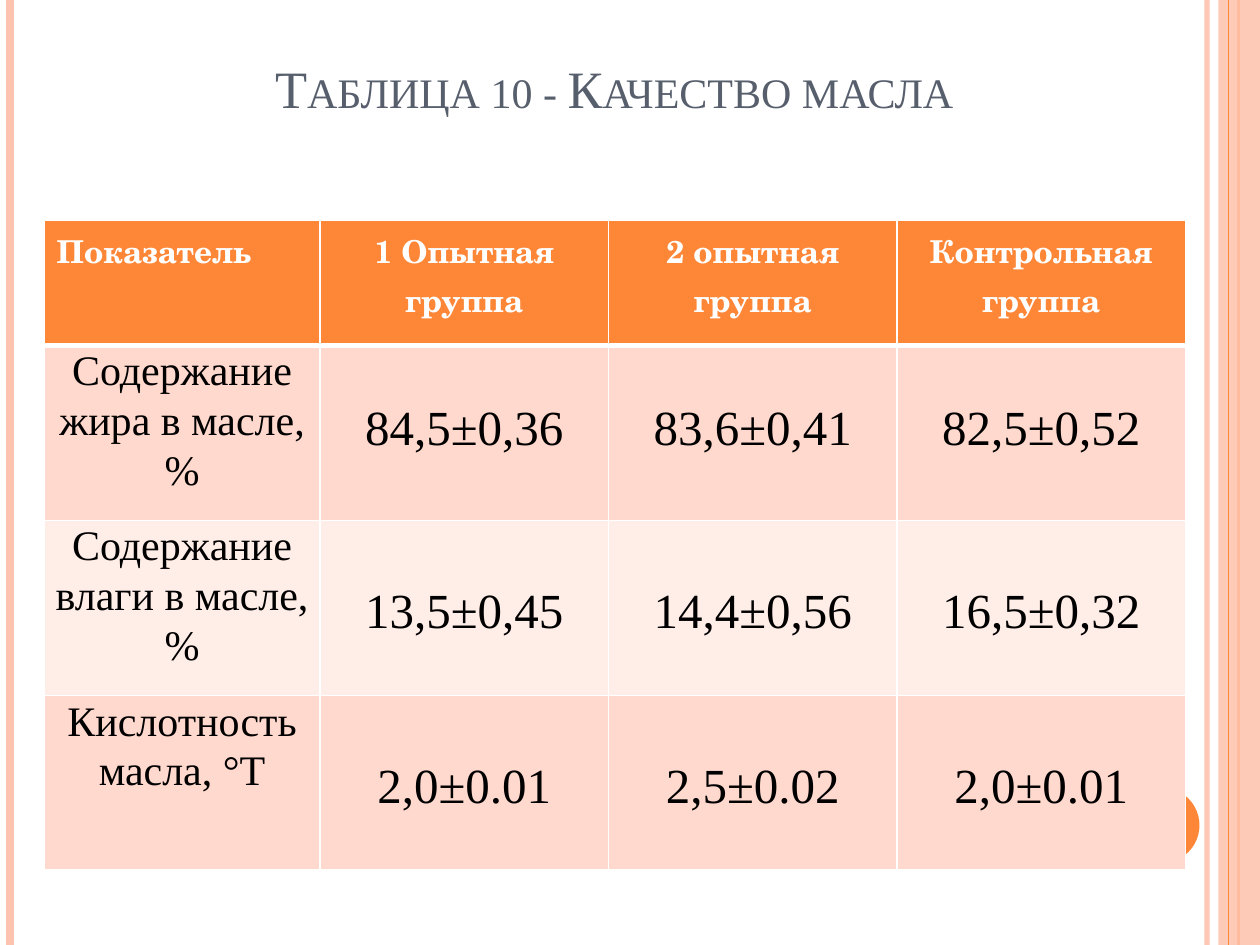
from dataclasses import dataclass

from lxml.etree import SubElement
from pptx import Presentation
from pptx.dml.color import RGBColor as Color
from pptx.enum.shapes import MSO_CONNECTOR as Connector, MSO_SHAPE as Shape
from pptx.enum.text import MSO_ANCHOR as Anchor, PP_ALIGN as Align
from pptx.oxml import parse_xml
from pptx.oxml.ns import nsdecls, qn
from pptx.util import Inches, Pt


@dataclass(frozen=True)
class Theme:
    orange: str = "FE8637"
    peach: str = "FEC3AE"
    slate: str = "575F6D"
    white: str = "FFFFFF"
    black: str = "000000"
    band_dark: str = "FFD9CE"
    band_light: str = "FFEDE8"
    serif: str = "Times New Roman"
    header_font: str = "TeX Gyre Schola"
    title_size: int = 30
    header_size: int = 18
    label_size: int = 24
    value_size: int = 28


THEME = Theme()
TITLE = "Таблица 10 - Качество масла"
HEADERS = ["Показатель", "1 Опытная группа", "2 опытная группа", "Контрольная группа"]
ROWS = [
    ("Содержание жира в масле, %", "84,5±0,36", "83,6±0,41", "82,5±0,52"),
    ("Содержание влаги в масле, %", "13,5±0,45", "14,4±0,56", "16,5±0,32"),
    ("Кислотность масла, °Т", "2,0±0.01", "2,5±0.02", "2,0±0.01"),
]
COLUMN_WIDTHS = [2.19, 2.29, 2.29, 2.29]
ROW_HEIGHTS = [0.99, 1.39, 1.39, 1.38]
VALUE_SPACINGS = [1.0, 1.07, 1.07]
VALUE_SIDES = [0.07, 0.03, 0.03]
LABEL_SPACING, LABEL_SIDE = 1.07, 0.03
VALUE_TOP = 0.45
THIN, THICK = 1, 3


def set_alpha(fill, percent):
    color = fill._xPr.find(qn("a:solidFill"))[0]
    SubElement(color, qn("a:alpha")).set("val", str(percent * 1000))


def add_stripe(slide, x, color, width, alpha=100):
    line = slide.shapes.add_connector(Connector.STRAIGHT, Inches(x), 0, Inches(x), Inches(7.5))
    line.line.color.rgb = Color.from_string(color)
    line.line.width = Pt(width)
    SubElement(line._element.spPr, qn("a:effectLst"))
    if alpha < 100:
        set_alpha(line.line.fill, alpha)


def add_block(slide, kind, box, color, alpha=100):
    shape = slide.shapes.add_shape(kind, *map(Inches, box))
    shape.shadow.inherit = False
    shape.fill.solid()
    shape.fill.fore_color.rgb = Color.from_string(color)
    shape.line.fill.background()
    if alpha < 100:
        set_alpha(shape.fill, alpha)


def write(frame, text, font, size, color, align=Align.CENTER, bold=False, spacing=None):
    paragraph = frame.paragraphs[0]
    paragraph.alignment = align
    paragraph.line_spacing = spacing
    run = paragraph.add_run()
    run.text = text
    run.font.name, run.font.size, run.font.bold = font, Pt(size), bold
    run.font.color.rgb = Color.from_string(color)
    return run


def style_cell(cell, fill, top, bottom):
    cell.fill.solid()
    cell.fill.fore_color.rgb = Color.from_string(fill)
    properties = cell._tc.get_or_add_tcPr()
    borders = [("L", THIN), ("R", THIN), ("T", top), ("B", bottom)]
    for position, (side, width) in enumerate(borders):
        properties.insert(position, parse_xml(
            f'<a:ln{side} {nsdecls("a")} w="{Pt(width)}"><a:solidFill>'
            f'<a:srgbClr val="{THEME.white}"/></a:solidFill></a:ln{side}>'))


def set_margins(cell, side, top=0):
    cell.margin_left = cell.margin_right = Inches(side)
    cell.margin_top, cell.margin_bottom = Inches(top), 0


def add_background(slide):
    add_stripe(slide, 9.58, THEME.peach, 3, 93)
    add_stripe(slide, 0.08, THEME.peach, 4.5)
    add_stripe(slide, 9.83, THEME.orange, 1.5)
    add_block(slide, Shape.RECTANGLE, (9.67, 0, 0.33, 7.5), THEME.peach, 87)
    add_stripe(slide, 9.75, THEME.orange, 0.75)
    add_block(slide, Shape.OVAL, (8.92, 6.25, 0.6, 0.6), THEME.orange)


def add_title(slide):
    frame = slide.shapes.add_textbox(*map(Inches, (0.5, 0.3, 8.75, 0.69))).text_frame
    frame.word_wrap = True
    frame.vertical_anchor = Anchor.BOTTOM
    run = write(frame, TITLE, THEME.serif, THEME.title_size, THEME.slate)
    run.font._element.set("cap", "small")


def add_quality_table(slide):
    table = slide.shapes.add_table(
        len(ROW_HEIGHTS), len(COLUMN_WIDTHS), Inches(0.35), Inches(1.75),
        Inches(sum(COLUMN_WIDTHS)), Inches(sum(ROW_HEIGHTS))).table
    for column, width in zip(table.columns, COLUMN_WIDTHS):
        column.width = Inches(width)
    for row, height in zip(table.rows, ROW_HEIGHTS):
        row.height = Inches(height)

    for index, text in enumerate(HEADERS):
        cell = table.cell(0, index)
        style_cell(cell, THEME.orange, THIN, THICK)
        write(cell.text_frame, text, THEME.header_font, THEME.header_size, THEME.white,
              Align.CENTER if index else Align.LEFT, bold=True)

    for number, (label, *values) in enumerate(ROWS):
        fill = THEME.band_light if number % 2 else THEME.band_dark
        spacing, side = VALUE_SPACINGS[number], VALUE_SIDES[number]
        cells = table.rows[number + 1].cells
        for cell in cells:
            style_cell(cell, fill, THIN if number else THICK, THIN)
        set_margins(cells[0], LABEL_SIDE)
        write(cells[0].text_frame, label, THEME.serif, THEME.label_size, THEME.black,
              spacing=LABEL_SPACING)
        for index, value in enumerate(values, start=1):
            set_margins(cells[index], side, VALUE_TOP * spacing)
            write(cells[index].text_frame, value, THEME.serif, THEME.value_size, THEME.black,
                  spacing=spacing)


def main():
    """Build the butter quality slide."""
    presentation = Presentation()
    presentation.slide_width, presentation.slide_height = Inches(10), Inches(7.5)
    slide = presentation.slides.add_slide(presentation.slide_layouts[6])
    add_background(slide)
    add_title(slide)
    add_quality_table(slide)
    presentation.save("out.pptx")


if __name__ == "__main__":
    main()
